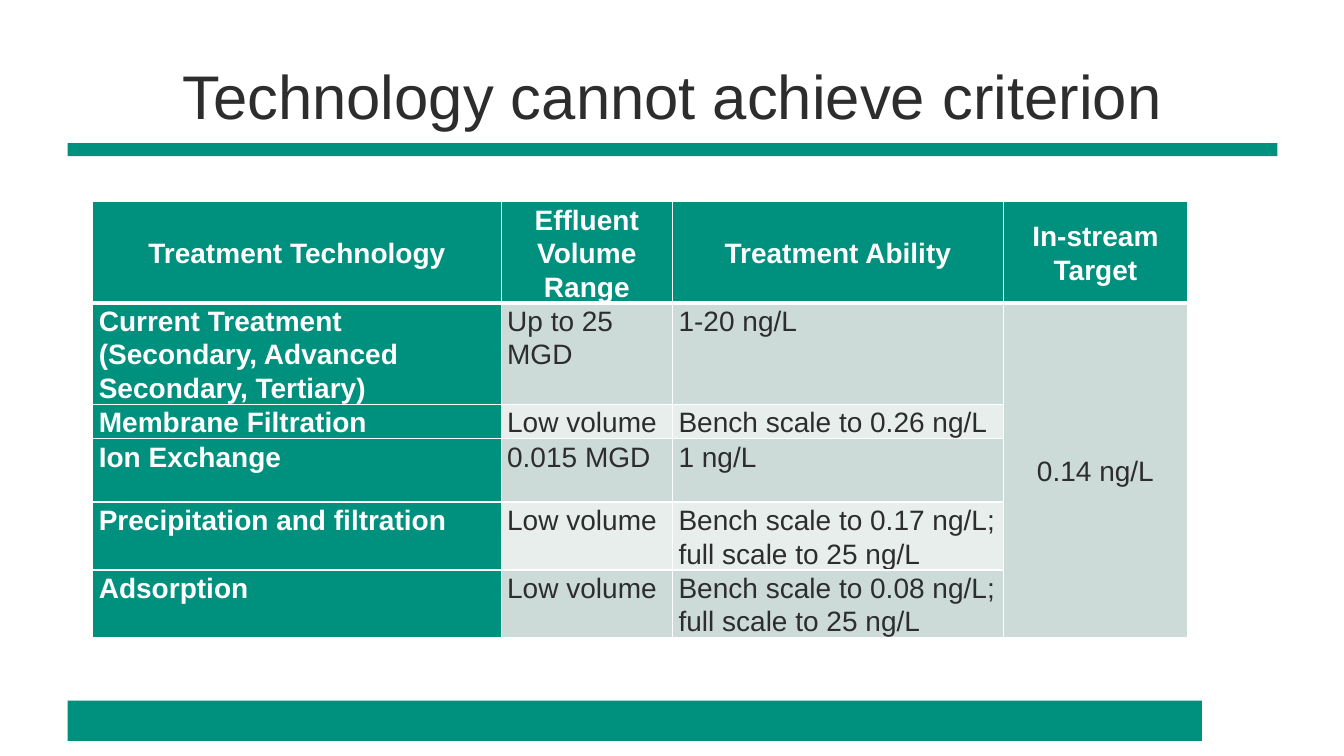
"""Build a slide with a table of treatment technologies and their limits."""
from lxml import etree
from pptx import Presentation
from pptx import util as u
from pptx.dml import color
from pptx.enum import shapes, text
from pptx.oxml import ns

HUES = {"green": "00907E", "ink": "2D2D2D", "white": "FFFFFF",
        "dark": "CCDBD8", "light": "E7EEEC"}
BARS = [(0.67, 1.42, 12, 0.13), (0.67, 6.95, 11.25, 0.4)]
COLS = [4.05, 1.7, 3.28, 1.83]
TALLS = [0.57, 0.63, 0.31, 0.63, 0.63, 0.63]
ROWS = [
    ["Treatment Technology", "Effluent Volume Range", "Treatment Ability", "In-stream Target"],
    ["Current Treatment (Secondary, Advanced Secondary, Tertiary)", "Up to 25 MGD",
     "1-20 ng/L", "0.14 ng/L"],
    ["Membrane Filtration", "Low volume", "Bench scale to 0.26 ng/L", ""],
    ["Ion Exchange", "0.015 MGD", "1 ng/L", ""],
    ["Precipitation and filtration", "Low volume",
     "Bench scale to 0.17 ng/L;\nfull scale to 25 ng/L", ""],
    ["Adsorption", "Low volume", "Bench scale to 0.08 ng/L;\nfull scale to 25 ng/L", ""],
]
INSETS = {"margin_left": u.Inches(0.06), "margin_top": u.Inches(0.01),
          "margin_right": u.Inches(0.06), "margin_bottom": 0}


def rgb(hue):
    return color.RGBColor.from_string(HUES[hue])


def apply(item, form):
    for name, value in form.items():
        setattr(item, name, value)


def paint(item, hue):
    item.fill.solid()
    item.fill.fore_color.rgb = rgb(hue)


def write(frame, words, size, hue, bold, align, space=1.0):
    frame.text = words
    for para in frame.paragraphs:
        apply(para, {"alignment": align, "line_spacing": space})
        apply(para.font, {"name": "Arial", "size": u.Pt(size), "bold": bold})
        para.font.color.rgb = rgb(hue)


def add_title(slide, words):
    title = slide.shapes.title
    apply(title, {"left": u.Inches(0.67), "top": u.Inches(0.33),
                  "width": u.Inches(12), "height": u.Inches(1.22)})
    apply(title.text_frame, {"vertical_anchor": text.MSO_ANCHOR.MIDDLE, "word_wrap": True})
    write(title.text_frame, words, 44, "ink", False, text.PP_ALIGN.CENTER)


def add_bar(slide, box):
    bar = slide.shapes.add_shape(shapes.MSO_SHAPE.RECTANGLE, *map(u.Inches, box))
    bar.shadow.inherit = False
    bar.line.fill.background()
    paint(bar, "green")


def add_edges(cell, base):
    props = cell._tc.get_or_add_tcPr()
    for side in "LRTB":
        width = base if side == "B" else 1
        line = etree.SubElement(props, ns.qn("a:ln" + side), w=str(u.Pt(width)))
        fill = etree.SubElement(line, ns.qn("a:solidFill"))
        etree.SubElement(fill, ns.qn("a:srgbClr"), val=HUES["white"])


def fill_cell(cell, words, row, col):
    head = row == 0
    bold = head or col == 0
    mid = head or col == len(COLS) - 1
    band = "dark" if row % 2 or mid else "light"
    apply(cell, INSETS)
    cell.vertical_anchor = text.MSO_ANCHOR.MIDDLE if mid else text.MSO_ANCHOR.TOP
    add_edges(cell, 3 if head else 1)
    paint(cell, "green" if bold else band)
    align = text.PP_ALIGN.CENTER if mid else text.PP_ALIGN.LEFT
    write(cell.text_frame, words, 20, "white" if bold else "ink", bold, align, 1.07)


def add_grid(slide):
    box = map(u.Inches, (0.92, 2, sum(COLS), sum(TALLS)))
    table = slide.shapes.add_table(len(ROWS), len(COLS), *box).table
    for col, width in zip(table.columns, COLS):
        col.width = u.Inches(width)
    for row, tall in zip(table.rows, TALLS):
        row.height = u.Inches(tall)
    for r, line in enumerate(ROWS):
        for c, words in enumerate(line):
            fill_cell(table.cell(r, c), words, r, c)
    table.cell(1, 3).merge(table.cell(5, 3))


def main():
    deck = Presentation()
    apply(deck, {"slide_width": u.Inches(13.33), "slide_height": u.Inches(7.5)})
    slide = deck.slides.add_slide(deck.slide_layouts[5])
    for box in BARS:
        add_bar(slide, box)
    add_title(slide, "Technology cannot achieve criterion")
    add_grid(slide)
    deck.save("out.pptx")


if __name__ == "__main__":
    main()
